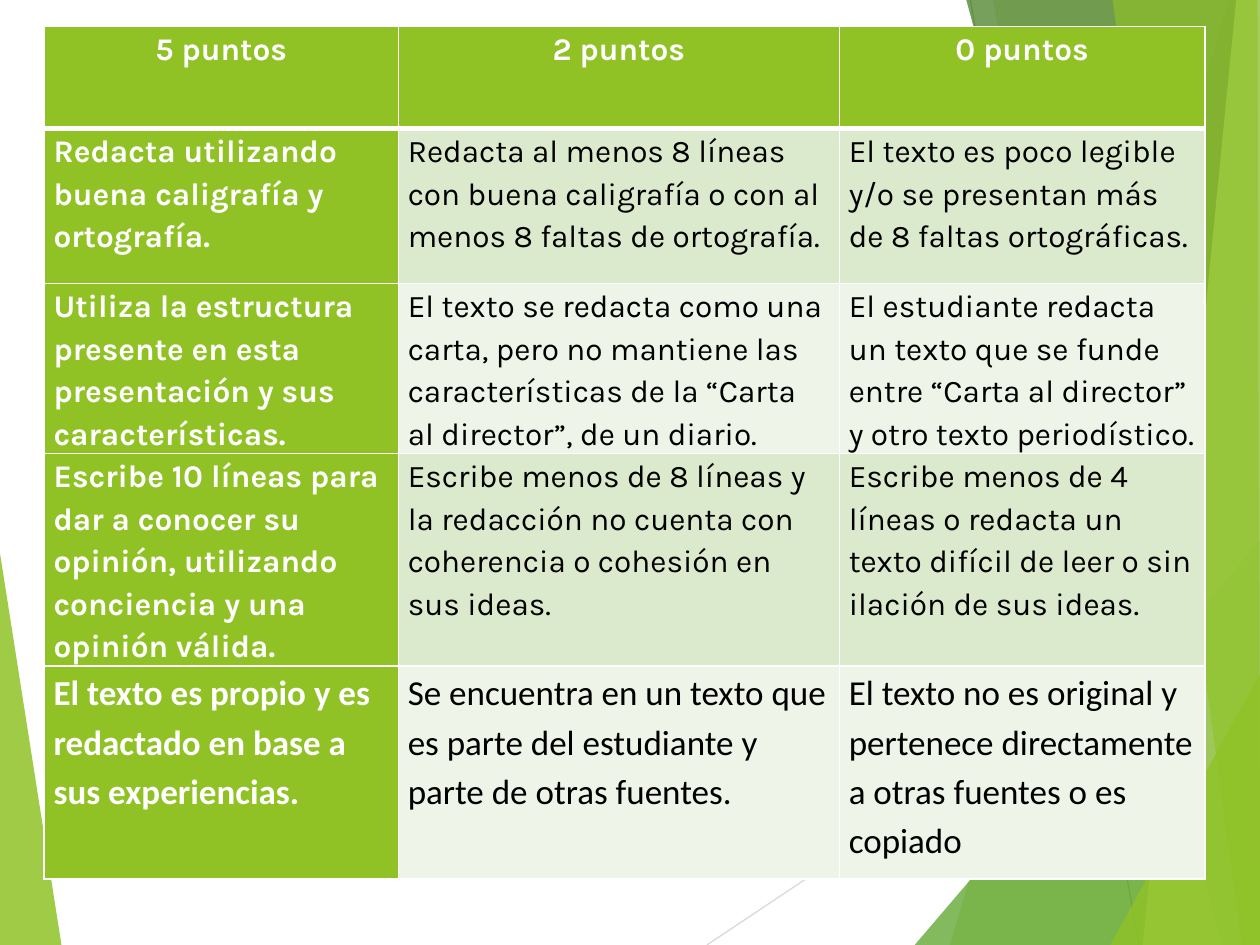
from lxml import etree
from pptx import Presentation
from pptx import util as u
from pptx.dml.color import RGBColor
from pptx.enum import shapes, text
from pptx.oxml import parse_xml
from pptx.oxml.ns import nsdecls, qn


def color(value):
    return RGBColor.from_string(value)


def border(side, width):
    return parse_xml(
        f'<a:{side} {nsdecls("a")} w="{u.Pt(width)}"><a:solidFill>'
        f'<a:srgbClr val="FFFFFF"/></a:solidFill></a:{side}>'
    )


WIDTH, HEIGHT = 25.4, 19.05
GREEN = "90C226"

presentation = Presentation()
presentation.slide_width = u.Cm(WIDTH)
presentation.slide_height = u.Cm(HEIGHT)
slide = presentation.slides.add_slide(presentation.slide_layouts[6])

corner = [(WIDTH, HEIGHT), (WIDTH, 0)]
facets = [
    ([(0, 11.15), (1.24, HEIGHT), (0, HEIGHT)], GREEN, 85),
    ([(24.77, 0), (19.15, HEIGHT), *corner], GREEN, 30),
    ([(20.02, 0), (23.34, HEIGHT), *corner], GREEN, 20),
    ([(18.44, HEIGHT), (WIDTH, 10.9), (WIDTH, HEIGHT)], "54A021", 72),
    ([(19.48, 0), (24.64, HEIGHT), *corner], "3F7819", 70),
    ([(24.92, 0), (23.04, HEIGHT), *corner], "C0E474", 70),
    ([(22.43, 0), (25.04, HEIGHT), (WIDTH, HEIGHT), (25.35, 0)], GREEN, 65),
    ([(22.38, HEIGHT), (WIDTH, 13.59), (WIDTH, HEIGHT)], GREEN, 80),
]
rays = [
    (14.25, HEIGHT, WIDTH, 11.61, "D9D9D9"),
    (19.56, 0, 22.96, HEIGHT, "BFBFBF"),
]

for *ends, ray_color in rays:
    connector = slide.shapes.add_connector(
        shapes.MSO_CONNECTOR.STRAIGHT, *[u.Cm(end) for end in ends]
    )
    connector.line.color.rgb = color(ray_color)
    connector.line.width = u.Pt(0.75)
    etree.SubElement(connector._element.spPr, qn("a:effectLst"))

for points, facet_color, opacity in facets:
    start, *others = [(u.Cm(x), u.Cm(y)) for x, y in points]
    builder = slide.shapes.build_freeform(*start)
    builder.add_line_segments(others, close=True)
    shape = builder.convert_to_shape()
    shape.shadow.inherit = False
    shape.line.fill.background()
    shape.fill.solid()
    shape.fill.fore_color.rgb = color(facet_color)
    fill_color = next(shape._element.spPr.iter(qn("a:srgbClr")))
    etree.SubElement(fill_color, qn("a:alpha"), val=str(opacity * 1000))

rubric = [
    ["5 puntos", "2 puntos", "0 puntos"],
    [
        "Redacta utilizando buena caligrafía y ortografía.",
        "Redacta al menos 8 líneas con buena caligrafía o con al menos 8 faltas de ortografía.",
        "El texto es poco legible y/o se presentan más de 8 faltas ortográficas.",
    ],
    [
        "Utiliza la estructura presente en esta presentación y sus características.",
        "El texto se redacta como una carta, pero no mantiene las características de la “Carta al director”, de un diario.",
        "El estudiante redacta un texto que se funde entre “Carta al director” y otro texto periodístico.",
    ],
    [
        "Escribe 10 líneas para dar a conocer su opinión, utilizando conciencia y una opinión válida.",
        "Escribe menos de 8 líneas y la redacción no cuenta con coherencia o cohesión en sus ideas.",
        "Escribe menos de 4 líneas o redacta un texto difícil de leer o sin ilación de sus ideas.",
    ],
    [
        "El texto es propio y es redactado en base a sus experiencias.",
        "Se encuentra en un texto que es parte del estudiante y parte de otras fuentes.",
        "El texto no es original y pertenece directamente a otras fuentes o es copiado",
    ],
]
column_widths = [7.14, 8.89, 7.37]
row_heights = [2.06, 3.12, 3.43, 4.29, 4.29]

table = slide.shapes.add_table(
    len(rubric), len(column_widths), u.Cm(0.89), u.Cm(0.53),
    u.Cm(sum(column_widths)), u.Cm(sum(row_heights)),
).table
table.first_col = True
for column, width in zip(table.columns, column_widths):
    column.width = u.Cm(width)
for row, height in zip(table.rows, row_heights):
    row.height = u.Cm(height)

for row_index, row_texts in enumerate(rubric):
    last_row = row_index == len(rubric) - 1
    for column_index, cell_text in enumerate(row_texts):
        header = row_index == 0 or column_index == 0
        band = "DBE9CD" if row_index % 2 else "EEF4E8"
        cell = table.cell(row_index, column_index)
        cell.margin_left = cell.margin_right = u.Cm(0.19)
        cell.margin_top = cell.margin_bottom = 0
        cell.fill.solid()
        cell.fill.fore_color.rgb = color(GREEN if header else band)
        top = 3 if row_index == 1 else 1
        bottom = 3 if row_index == 0 else 1
        sides = [("lnL", 1), ("lnR", 1), ("lnT", top), ("lnB", bottom)]
        properties = cell._tc.get_or_add_tcPr()
        for position, (side, width) in enumerate(sides):
            properties.insert(position, border(side, width))

        cell.text = cell_text
        paragraph = cell.text_frame.paragraphs[0]
        paragraph.line_spacing = 1.15
        paragraph.alignment = text.PP_ALIGN.LEFT if row_index else text.PP_ALIGN.CENTER
        paragraph.font.name = "Calibri" if last_row else "Karla"
        paragraph.font.size = u.Pt(20 if last_row else 18)
        paragraph.font.bold = header
        paragraph.font.color.rgb = color("FFFFFF" if header else "000000")

presentation.save("out.pptx")
